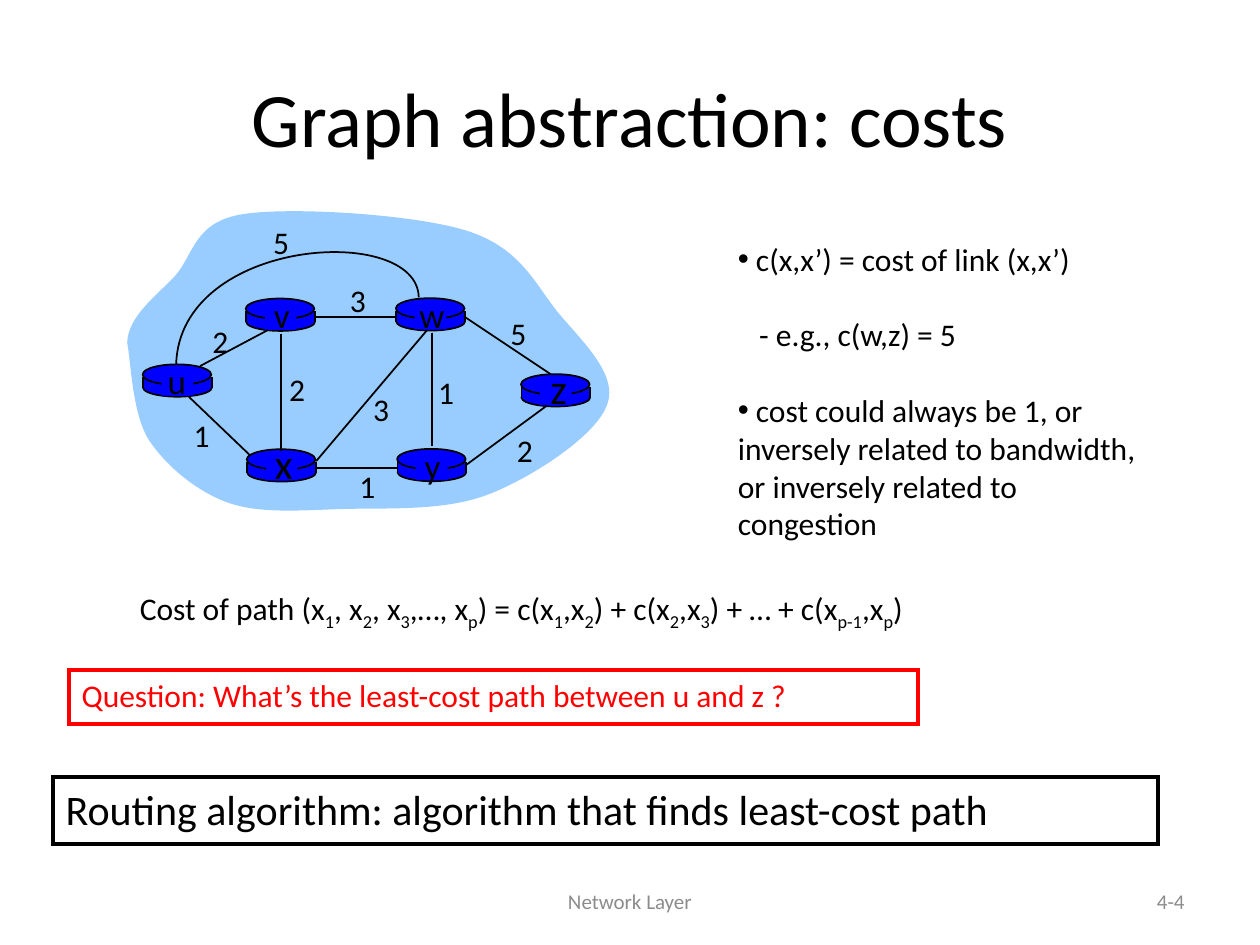
from lxml import etree
from pptx import Presentation
from pptx.dml.color import RGBColor
from pptx.enum.shapes import MSO_CONNECTOR, MSO_SHAPE
from pptx.enum.text import MSO_ANCHOR as ANCHOR, PP_ALIGN as ALIGN
from pptx.oxml.ns import qn
from pptx.util import Pt

BLACK = RGBColor(0x00, 0x00, 0x00)
GRAY = RGBColor(0x8C, 0x8C, 0x8C)
RED = RGBColor(0xFF, 0x00, 0x00)
BLUE = RGBColor(0x00, 0x00, 0xFF)
SKY = RGBColor(0x99, 0xCC, 0xFF)

prs = Presentation()
prs.slide_width, prs.slide_height = Pt(720), Pt(540)
s = prs.slides.add_slide(prs.slide_layouts[6])


def add_text(text, x, y, w, h, size=18, color=BLACK, align=ALIGN.LEFT,
             anchor=ANCHOR.TOP, side=7.2, border=None):
    """Add a text box; newlines split paragraphs, |bars| enclose subscripts."""
    sp = s.shapes.add_textbox(Pt(x), Pt(y), Pt(w), Pt(h))
    if border is not None:
        sp.line.color.rgb = border
        sp.line.width = Pt(2.25)
        etree.SubElement(sp.line._get_or_add_ln(), qn("a:miter"), lim="800000")
    tf = sp.text_frame
    tf.word_wrap = True
    tf.vertical_anchor = anchor
    tf.margin_left = tf.margin_right = Pt(side)
    for i, line in enumerate(text.split("\n")):
        p = tf.add_paragraph() if i else tf.paragraphs[0]
        p.alignment = align
        for j, part in enumerate(line.split("|")):
            r = p.add_run()
            r.text = part
            r.font.name = "Calibri"
            r.font.size = Pt(size)
            r.font.color.rgb = color
            if j % 2:
                r._r.get_or_add_rPr().set("baseline", "-25000")
    return tf


def add_curve(start, points, close):
    """Add a freeform whose points, three by three, define cubic curves."""
    builder = s.shapes.build_freeform(Pt(start[0]), Pt(start[1]))
    builder.add_line_segments([(Pt(x), Pt(y)) for x, y in points], close=close)
    sp = builder.convert_to_shape()
    sp.shadow.inherit = False
    segments = list(sp._element.iter(qn("a:lnTo")))
    for i in range(0, len(segments), 3):
        cubic = segments[i]
        cubic.tag = qn("a:cubicBezTo")
        for other in segments[i + 1:i + 3]:
            cubic.append(other[0])
            other.getparent().remove(other)
    return sp


# Headings and footer
add_text("Network Layer", 246, 500.5, 228, 28.8, size=12, color=GRAY,
         align=ALIGN.CENTER, anchor=ANCHOR.MIDDLE)
add_text("4-4", 516, 500.5, 168, 28.8, size=12, color=GRAY,
         align=ALIGN.RIGHT, anchor=ANCHOR.MIDDLE)
add_text("Graph abstraction: costs", 36, 21.6, 648, 90, size=44,
         align=ALIGN.CENTER, anchor=ANCHOR.MIDDLE)

# Network cloud
cloud = add_curve((72.7, 195.8), [
    (73.4, 180.7), (88.6, 169.9), (100.1, 157.7),
    (110.9, 145.4), (110.9, 126.7), (139, 122.4),
    (166.3, 118.1), (236.2, 122.4), (266.4, 131.8),
    (296.6, 141.1), (305.3, 161.3), (318.2, 177.8),
    (331.9, 194.4), (353.5, 213.8), (347, 231.1),
    (341.3, 248.4), (305.3, 272.2), (280.1, 282.2),
    (254.9, 292.3), (221.8, 290.2), (196.6, 290.9),
    (172.1, 291.6), (149, 293.8), (130.3, 287.3),
    (112.3, 280.8), (95, 266.4), (85, 251.3),
    (75.6, 236.2), (74.9, 207.4), (72.7, 195.8),
], close=True)
cloud.fill.solid()
cloud.fill.fore_color.rgb = SKY
cloud.line.fill.background()

# Routers: name, left, top, name centre, name size
routers = [
    ("u", 81.5, 208.2, 101, 20), ("x", 141, 256.7, 162.1, 24),
    ("v", 140.4, 170.6, 161.1, 20), ("w", 226.2, 170.4, 246.8, 20),
    ("y", 226.9, 256.5, 247.2, 20), ("z", 297.7, 213.8, 319.2, 24),
]
# Router parts: preset, offset x, offset y, width, height, outlined
router_parts = [
    (MSO_SHAPE.OVAL, 0.3, 8.2, 39.2, 10.3, True),
    (MSO_SHAPE.RECTANGLE, 0.3, 7.3, 39.2, 6.3, False),
    (MSO_SHAPE.OVAL, 0, 0, 39.2, 11.7, True),
    (MSO_SHAPE.RECTANGLE, 10.9, 1.4, 18, 16.5, False),
]
lines = []
for name, x, y, cx, size in routers:
    for preset, dx, dy, w, h, outlined in router_parts:
        sp = s.shapes.add_shape(preset, Pt(x + dx), Pt(y + dy), Pt(w), Pt(h))
        sp.shadow.inherit = False
        sp.fill.solid()
        sp.fill.fore_color.rgb = BLUE
        if outlined:
            sp.line.color.rgb = BLACK
            sp.line.width = Pt(1)
        else:
            sp.line.fill.background()
    lines += [(x + dx, y + 7.3, x + dx, y + 13.6) for dx in (0.3, 39.5)]

# Links, drawn together with the side walls of the routers
lines += [
    (114.3, 209.2, 153.1, 188.6),  # u-v
    (247, 190.1, 247, 254.9),      # w-y
    (160.4, 190.8, 160.4, 257.8),  # v-x
    (180.7, 263.5, 244.1, 188.6),  # x-w
    (266.4, 265.7, 312.5, 231.8),  # y-z
    (227.5, 267.3, 181.4, 267.3),  # y-x
    (142.6, 259.9, 108, 226.8),    # x-u
    (226.8, 181.2, 180.7, 181.2),  # w-v
    (314.6, 213.8, 265, 180.7),    # z-w
]
for ends in lines:
    link = s.shapes.add_connector(MSO_CONNECTOR.STRAIGHT, *map(Pt, ends))
    link.line.color.rgb = BLACK
    link.line.width = Pt(1)
    etree.SubElement(link._element.spPr, qn("a:effectLst"))
arc = add_curve((239.3, 169.9),
                [(238.6, 127.4), (103, 135.4), (100.7, 208.1)], close=False)
arc.fill.background()
arc.line.color.rgb = BLACK
arc.line.width = Pt(1)

for name, x, y, cx, size in routers:
    rise = 6.2 if size == 20 else 10.2
    add_text(name, cx - 14, y - rise, 28, size * 1.5, size=size,
             align=ALIGN.CENTER, side=0)

# Link costs: cost, centre, top
for cost, cx, y in [
    ("2", 126, 180.3), ("2", 169.8, 207.6), ("1", 115.2, 234),
    ("3", 217.8, 219.4), ("1", 210, 263.5), ("1", 255, 209.5),
    ("2", 299.9, 242.6), ("5", 296.3, 175.7), ("3", 204.5, 157),
    ("5", 160.6, 123.8),
]:
    add_text(cost, cx - 12.5, y, 25, 29, align=ALIGN.CENTER, side=0)

# Explanations
notes = add_text(" c(x,x’) = cost of link (x,x’)\n- e.g., c(w,z) = 5\n"
                 " cost could always be 1, or\ninversely related to bandwidth,\n"
                 "or inversely related to\ncongestion",
                 414.6, 133.5, 276.5, 180)
for i in (1, 2):
    notes.paragraphs[i].space_before = Pt(21.6)
for i in (0, 2):
    pPr = notes.paragraphs[i]._p.get_or_add_pPr()
    etree.SubElement(pPr, qn("a:buFont"), typeface="Arial")
    etree.SubElement(pPr, qn("a:buChar"), char="•")
notes.paragraphs[1]._p.get_or_add_pPr().set("marL", str(Pt(12.2)))

add_text("Cost of path (x|1|, x|2|, x|3|,…, x|p|) = c(x|1|,x|2|) + "
         "c(x|2|,x|3|) + … + c(x|p-1|,x|p|)", 72.8, 333.1, 553, 29)
add_text("Question: What’s the least-cost path between u and z ?",
         39.6, 383, 485, 31, color=RED, border=RED)
add_text("Routing algorithm: algorithm that finds least-cost path",
         30.4, 444.2, 631.6, 38.2, size=24, border=BLACK)

prs.save("out.pptx")
